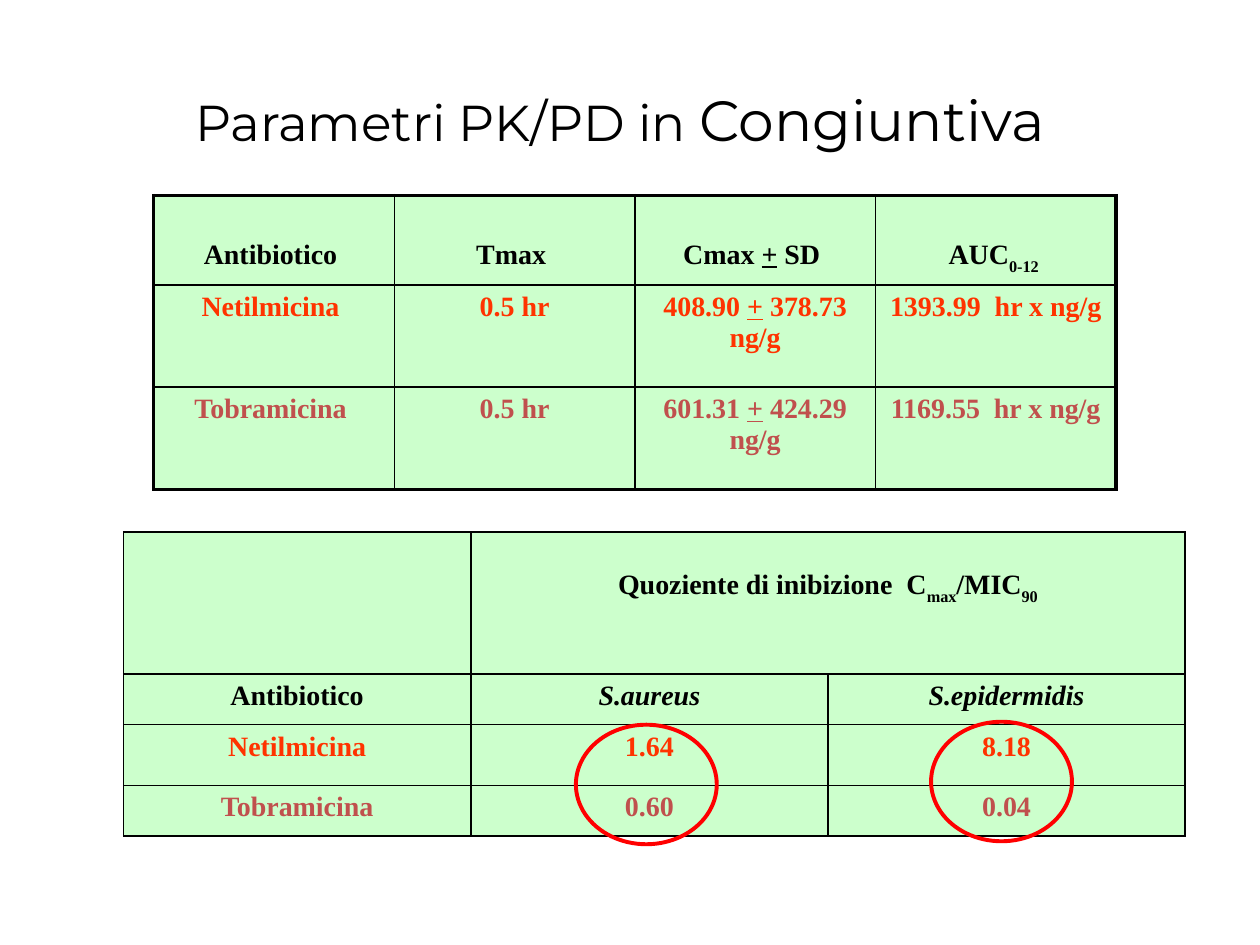
from lxml.etree import SubElement
from pptx import Presentation
from pptx.dml.color import RGBColor
from pptx.enum.shapes import MSO_SHAPE
from pptx.enum.text import MSO_ANCHOR, PP_ALIGN
from pptx.oxml.ns import qn
from pptx.util import Cm, Pt

BLACK = RGBColor(0x00, 0x00, 0x00)
ORANGE = RGBColor(0xFF, 0x33, 0x00)
BRICK = RGBColor(0xC0, 0x50, 0x4D)
RED = RGBColor(0xFF, 0x00, 0x00)
PALE_GREEN = RGBColor(0xCC, 0xFF, 0xCC)

THIN, THICK = Pt(1), Pt(2.25)

# Each cell is a list of (text, style) runs
PARAMETERS = [
    [[("Antibiotico ", "")], [("Tmax ", "")],
     [("Cmax ", ""), ("+", "underline"), (" SD ", "")],
     [("AUC", ""), ("0-12 ", "subscript")]],
    [[("Netilmicina ", "")], [("0.5 hr", "")],
     [("408.90 ", ""), ("+", "underline"), (" 378.73 ng/g", "")],
     [("1393.99  hr x ng/g", "")]],
    [[("Tobramicina ", "")], [("0.5 hr", "")],
     [("601.31 ", ""), ("+", "underline"), (" 424.29 ng/g", "")],
     [("1169.55  hr x ng/g", "")]],
]
QUOTIENTS = [
    [[], [("Quoziente di inibizione  C", ""), ("max", "subscript"),
          ("/MIC", ""), ("90", "subscript")], []],
    [[("Antibiotico", "")], [("S.aureus", "italic")], [("S.epidermidis", "italic")]],
    [[("Netilmicina", "")], [("1.64", "")], [("8.18", "")]],
    [[("Tobramicina", "")], [("0.60", "")], [("0.04", "")]],
]


def set_borders(cell, widths):
    """Draw black borders; widths are left, right, top, bottom."""
    properties = cell._tc.get_or_add_tcPr()
    for side, width in zip("LRTB", widths):
        line = SubElement(properties, qn(f"a:ln{side}"), w=str(width))
        fill = SubElement(line, qn("a:solidFill"))
        SubElement(fill, qn("a:srgbClr"), val=str(BLACK))


def write_cell(cell, runs, color):
    paragraph = cell.text_frame.paragraphs[0]
    paragraph.alignment = PP_ALIGN.CENTER
    font = paragraph.font
    font.name, font.size, font.bold = "Times New Roman", Pt(16), True
    font.color.rgb = color
    for text, style in runs:
        run = paragraph.add_run()
        run.text = text
        if style == "underline":
            run.font.underline = True
        elif style == "italic":
            run.font.italic = True
        elif style == "subscript":
            run.font._element.set("baseline", "-30000")


def add_grid(slide, left, top, widths, heights, rows, colors, frame):
    """Add a green table whose outer border has the width of frame."""
    table = slide.shapes.add_table(
        len(heights), len(widths), left, top, sum(widths), sum(heights)).table
    table.first_row = table.horz_banding = False
    for column, width in zip(table.columns, widths):
        column.width = width
    last_row, last_column = len(heights) - 1, len(widths) - 1
    for i, (height, cells, color) in enumerate(zip(heights, rows, colors)):
        table.rows[i].height = height
        for j, runs in enumerate(cells):
            cell = table.cell(i, j)
            edges = (j == 0, j == last_column, i == 0, i == last_row)
            set_borders(cell, [frame if edge else THIN for edge in edges])
            cell.fill.solid()
            cell.fill.fore_color.rgb = PALE_GREEN
            write_cell(cell, runs, color)
    return table


def add_title(slide, left, top, width, height):
    frame = slide.shapes.add_textbox(left, top, width, height).text_frame
    frame.word_wrap = True
    frame.vertical_anchor = MSO_ANCHOR.MIDDLE
    paragraph = frame.paragraphs[0]
    paragraph.alignment = PP_ALIGN.CENTER
    paragraph.font.name = "Montserrat"
    paragraph.font.color.rgb = BLACK
    for text, size in (("Parametri PK/PD in ", 28.8), ("Congiuntiva", 32.4)):
        run = paragraph.add_run()
        run.text = text
        run.font.size = Pt(size)


def add_parameters(slide, left, top, width):
    table = add_grid(slide, left, top, [width // 4] * 4,
                     [Cm(1.73), Cm(2.06), Cm(2.06)], PARAMETERS,
                     [BLACK, ORANGE, BRICK], THICK)
    for cell in table.rows[0].cells:
        cell.margin_top = Cm(0.88)


def add_quotients(slide, left, top):
    table = add_grid(slide, left, top, [Cm(7), Cm(7.2), Cm(7.2)],
                     [Cm(2.87), Cm(1.02), Cm(1.22), Cm(1.02)], QUOTIENTS,
                     [BLACK, BLACK, ORANGE, BRICK], THIN)
    header = table.cell(0, 1)
    header.merge(table.cell(0, 2))
    header.margin_top = Cm(0.76)

    # Rings around the two result columns
    for ring_left, ring_top in ((Cm(9.12), Cm(3.89)), (Cm(16.28), Cm(3.83))):
        ring = slide.shapes.add_shape(
            MSO_SHAPE.OVAL, left + ring_left, top + ring_top, Cm(2.84), Cm(2.41))
        ring.shadow.inherit = False
        ring.fill.background()
        ring.line.color.rgb = RED
        ring.line.width = THICK


def main():
    presentation = Presentation()
    presentation.slide_width, presentation.slide_height = Cm(25.4), Cm(19.05)
    slide = presentation.slides.add_slide(presentation.slide_layouts[6])
    add_title(slide, Cm(2.9), Cm(1.52), Cm(19.2), Cm(1.75))
    add_parameters(slide, Cm(3.1), Cm(3.94), Cm(19.4))
    add_quotients(slide, Cm(2.49), Cm(10.72))
    presentation.save("out.pptx")


if __name__ == "__main__":
    main()
